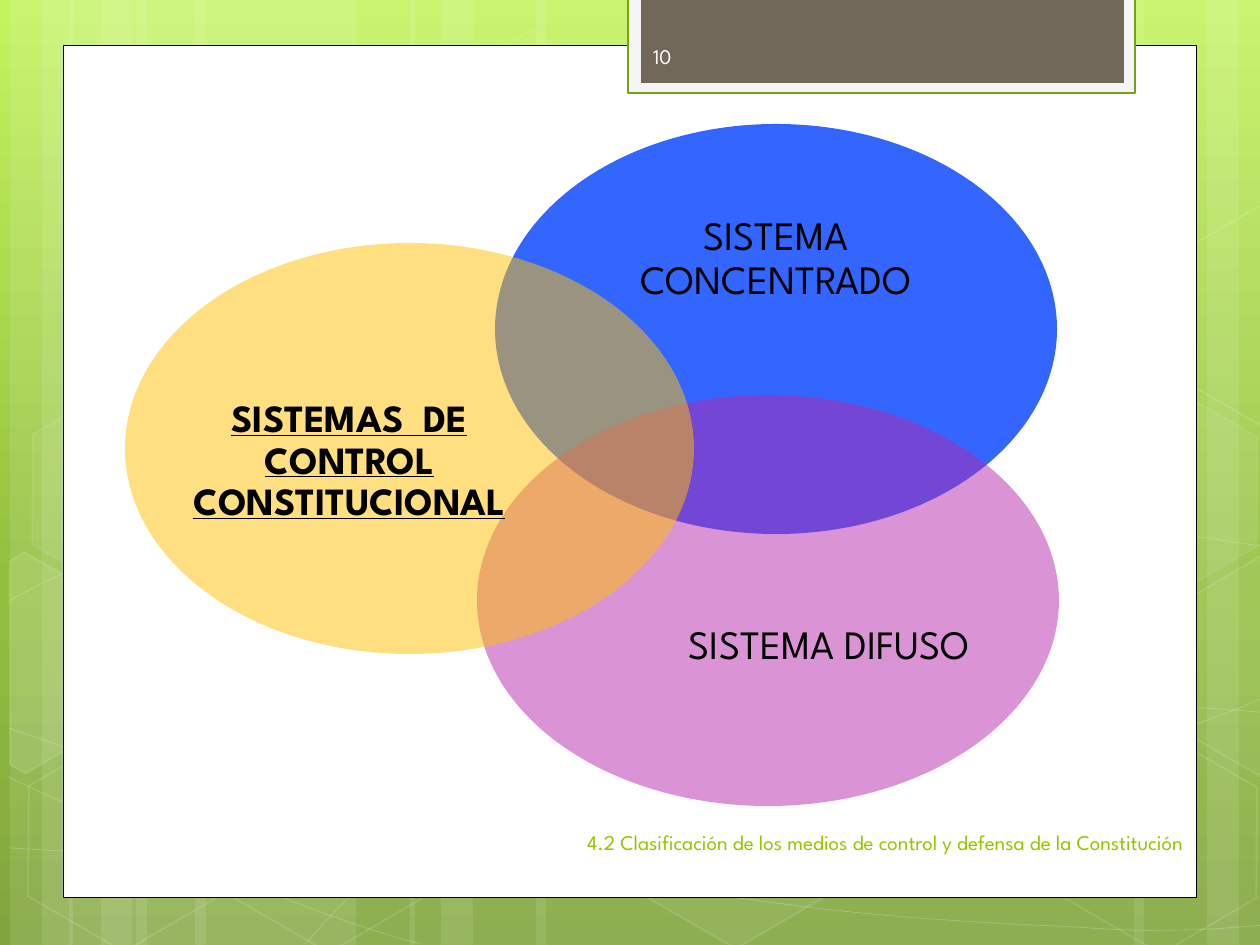
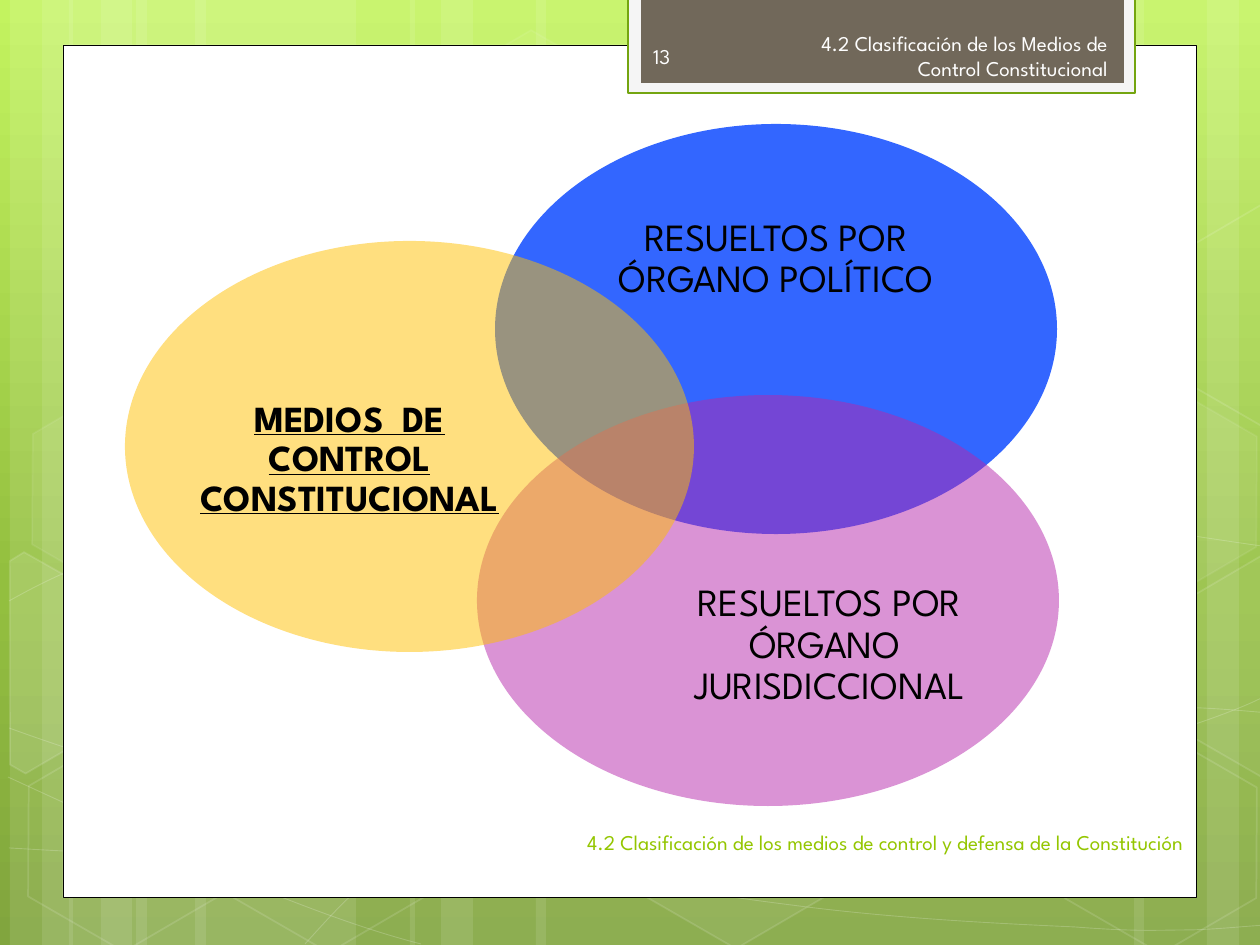
import pptx
import pptx.dml.color
import pptx.enum.shapes
import pptx.enum.text
import pptx.oxml.ns
import pptx.util
import lxml.etree

PX = 914400 / 126
FONT = "League Spartan"
WHITE, BLACK, PALE = "FFFFFF", "000000", "FEFEFE"
FOOTER = "4.2 Clasificación de los medios de control y defensa de la Constitución"
SHAPE = pptx.enum.shapes.MSO_SHAPE
ALIGN = pptx.enum.text.PP_ALIGN
qn = pptx.oxml.ns.qn


def paint(shape, fill=None, line=None):
    """fill is (colour, opacity %); line is (colour, opacity %, width in points)."""
    shape.shadow.inherit = False
    for target, paint_values in ((shape.fill, fill), (shape.line.fill, line)):
        if paint_values is None:
            target.background()
            continue
        target.solid()
        target.fore_color.rgb = pptx.dml.color.RGBColor.from_string(paint_values[0])
    if line:
        shape.line.width = pptx.util.Pt(line[2])
    properties = shape.element.spPr
    for parent, paint_values in ((properties, fill), (properties.find(qn("a:ln")), line)):
        if paint_values and paint_values[1] < 100:
            color = parent.find(qn("a:solidFill")).find(qn("a:srgbClr"))
            lxml.etree.SubElement(color, qn("a:alpha"), val=str(paint_values[1] * 1000))


def write(slide, text, box, color, align, spacing=1.0, inset=(0, 0), **font_values):
    textbox = slide.shapes.add_textbox(*(round(value * PX) for value in box))
    frame = textbox.text_frame
    frame.word_wrap = True
    frame.vertical_anchor = pptx.enum.text.MSO_ANCHOR.MIDDLE
    frame.margin_left = frame.margin_right = round(inset[0] * PX)
    frame.margin_top = frame.margin_bottom = round(inset[1] * PX)
    paragraph = frame.paragraphs[0]
    paragraph.alignment = align
    paragraph.line_spacing = spacing
    run = paragraph.add_run()
    run.text = text
    run.font.name = FONT
    run.font.color.rgb = pptx.dml.color.RGBColor.from_string(color)
    for name, value in font_values.items():
        setattr(run.font, name, value)


# Shared background: gradient stops, vertical strips, curves and hexagons
gradient_stops = [(0, "C3F35F"), (62, "93BF3F"), (100, "81A53E")]
strips = [  # left, width
    (136, 220), (10, 63), (42, 105), (195, 220), (69, 63), (101, 105),
    (924, 220), (1207, 63), (1134, 105), (536, 388), (410, 63), (441, 105),
]
curves = [  # start point, then two control points and an end point per segment
    [(9, 848), (77, 852), (145, 856), (239, 854), (334, 853), (451, 851), (577, 838),
     (703, 825), (882, 801), (998, 777), (1113, 753), (1231, 716), (1269, 694)],
    [(9, 601), (45, 581), (82, 562), (152, 543), (224, 524), (326, 496), (437, 488),
     (550, 479), (685, 478), (824, 488), (963, 498), (1193, 537), (1269, 547)],
    [(8, 777), (160, 847), (311, 916), (421, 944)],
    [(9, 728), (48, 742), (88, 756), (161, 776), (234, 795), (344, 827), (450, 848),
     (554, 869), (687, 892), (791, 905), (896, 919), (1008, 924), (1075, 927),
     (1140, 932), (1158, 930), (1191, 930), (1223, 929), (1246, 926), (1269, 925)],
    [(305, 944), (328, 919), (350, 893), (381, 871), (411, 848), (454, 823), (489, 805),
     (524, 788), (546, 780), (592, 767), (638, 755), (722, 737), (766, 728),
     (811, 719), (818, 719), (857, 717), (896, 713), (958, 709), (1000, 708),
     (1045, 707), (1116, 708), (1116, 708), (1144, 708), (1173, 708), (1201, 708),
     (1223, 709), (1245, 711), (1268, 713)],
]
hexagons = [  # left, top, fill opacity, line opacity
    (421, 45, 4, 8), (626, 742, 6, 12), (14, 745, 0, 12), (18, 393, 7, 8),
    (219, 746, 0, 12), (949, 571, 10, 12), (1051, 747, 0, 12), (1051, 396, 7, 8),
]
left_cut = [(-42, 594), (-34, 579), (77, 578), (132, 675), (78, 770), (60, 770)]
right_cut = [(1155, 654), (1209, 559), (1220, 559), (1326, 741), (1321, 750), (1210, 750)]
cut_hexagons = [  # fill opacity, outline before turning
    (10, left_cut), (4, right_cut), (0, [(x, y - 351) for x, y in right_cut]),
]

# White panel and page tab
frames = [
    ((63, 45, 1134, 853), WHITE, (BLACK, 100, 0.5)),
    ((628, -3, 507, 96), "F5F5F5", ("74A510", 100, 1.25)),
    ((641, -3, 483, 86), "71685A", None),
]

# Venn diagrams: each circle comes with its label box
top_circle, top_label = (495, 124, 562, 410), (570, 167, 412, 185)
low_circle, low_label = (477, 395, 582, 411), (655, 533, 349, 226)
left_circle, left_label = (125, 242, 569, 411), (179, 348, 341, 226)
pages = [
    {"number": "10", "heading": None, "sizes": (23, 23, 22), "left_shift": 1,
     "labels": ("SISTEMA CONCENTRADO", "SISTEMA DIFUSO",
                "SISTEMAS  DE CONTROL CONSTITUCIONAL")},
    {"number": "13", "heading": "4.2 Clasificación de los Medios de Control Constitucional",
     "sizes": (22, 22, 21), "left_shift": -1,
     "labels": ("RESUELTOS POR ÓRGANO POLÍTICO", "RESUELTOS POR ÓRGANO  JURISDICCIONAL",
                "MEDIOS  DE CONTROL CONSTITUCIONAL")},
]

presentation = pptx.Presentation()
presentation.slide_width = round(1260 * PX)
presentation.slide_height = round(945 * PX)

for page in pages:
    slide = presentation.slides.add_slide(presentation.slide_layouts[6])
    shapes = slide.shapes

    # Gradient
    background = slide.background.fill
    background.gradient()
    background.gradient_angle = 270
    stop_list = next(slide.element.iter(qn("a:gsLst")))
    stop_list.clear()
    for position, color in gradient_stops:
        stop = lxml.etree.SubElement(stop_list, qn("a:gs"), pos=str(position * 1000))
        lxml.etree.SubElement(stop, qn("a:srgbClr"), val=color)

    # Strips
    for left, width in strips:
        strip = shapes.add_shape(SHAPE.RECTANGLE, round(left * PX), 0,
                                 round(width * PX), presentation.slide_height)
        paint(strip, (WHITE, 10))

    # Curves: every three points become one Bézier segment
    for start, *points in curves:
        builder = shapes.build_freeform(*start, scale=PX)
        builder.add_line_segments(points, close=False)
        curve = builder.convert_to_shape()
        paint(curve, line=(WHITE, 20, 0.5))
        steps = list(curve.element.iter(qn("a:lnTo")))
        for first in range(0, len(steps), 3):
            outline = steps[first].getparent()
            segment = lxml.etree.SubElement(outline, qn("a:cubicBezTo"))
            for step in steps[first:first + 3]:
                segment.append(step[0])
                outline.remove(step)

    # Hexagons
    for left, top, fill_opacity, line_opacity in hexagons:
        hexagon = shapes.add_shape(SHAPE.HEXAGON, round(left * PX), round(top * PX),
                                   round(220 * PX), round(192 * PX))
        hexagon.adjustments[0] = 0.285
        hexagon.rotation = 30
        paint(hexagon, (WHITE, fill_opacity) if fill_opacity else None,
              (WHITE, line_opacity, 1))
    for fill_opacity, outline in cut_hexagons:
        builder = shapes.build_freeform(*outline[0], scale=PX)
        builder.add_line_segments(outline[1:], close=True)
        hexagon = builder.convert_to_shape()
        hexagon.rotation = 30
        paint(hexagon, (WHITE, fill_opacity) if fill_opacity else None, (WHITE, 12, 1))

    # Panel and tab
    for box, color, line in frames:
        frame_shape = shapes.add_shape(SHAPE.RECTANGLE, *(round(value * PX) for value in box))
        paint(frame_shape, (color, 100), line)

    # Heading, footer and page number
    small = {"size": pptx.util.Pt(12), "inset": (13, 6)}
    if page["heading"]:
        write(slide, page["heading"], (778, 31, 343, 50), PALE, ALIGN.RIGHT, **small)
    write(slide, FOOTER, (464, 796, 733, 93), "94C600", ALIGN.RIGHT, **small)
    write(slide, page["number"], (640, 31, 184, 50), PALE, ALIGN.LEFT, **small)

    # Venn circles with labels
    circles = [
        (top_circle, top_label, ("3366FF", 100), False, 0),
        (low_circle, low_label, ("B628AC", 50), False, 0),
        (left_circle, left_label, ("FFC000", 50), True, page["left_shift"]),
    ]
    for (circle_box, label_box, fill, strong, offset), label, size in zip(
            circles, page["labels"], page["sizes"]):
        left, top, width, height = circle_box
        circle = shapes.add_shape(SHAPE.OVAL, round(left * PX), round((top + offset) * PX),
                                  round(width * PX), round(height * PX))
        paint(circle, fill)
        left, top, width, height = label_box
        write(slide, label, (left, top + offset, width, height), BLACK, ALIGN.CENTER, 0.9,
              size=pptx.util.Pt(size), bold=strong, underline=strong)

presentation.save("out.pptx")
